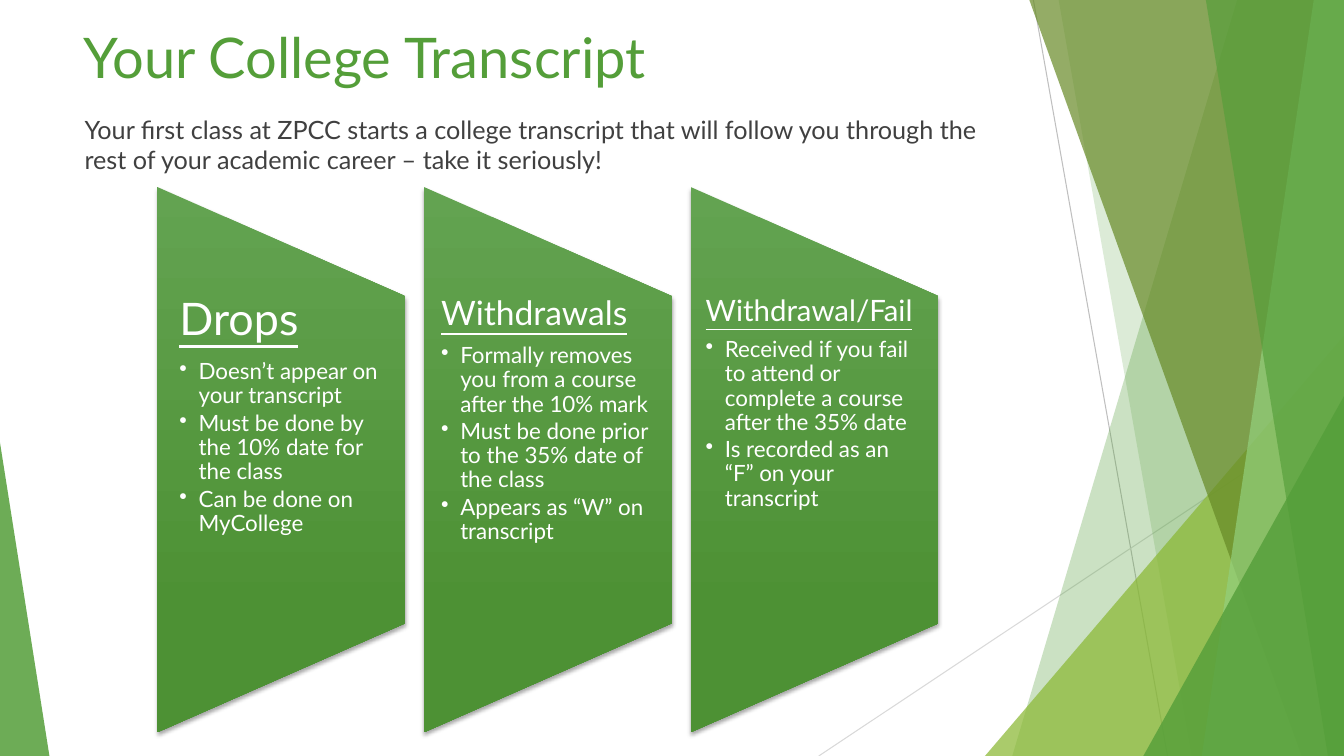
from dataclasses import dataclass

from lxml.etree import SubElement as Sub
from pptx import Presentation
from pptx.dml.color import RGBColor as Rgb
from pptx.enum.shapes import MSO_CONNECTOR as Link, MSO_SHAPE as Form
from pptx.oxml.ns import qn
from pptx.util import Inches, Pt


@dataclass(frozen=True)
class Theme:
    face: str = "Lato"
    green: str = "549E39"
    lime: str = "8AB833"
    olive: str = "678A26"
    mint: str = "93D07D"
    light: str = "63A351"
    dark: str = "4D9134"
    ink: str = "404040"
    white: str = "FFFFFF"
    title: int = 40
    lead: int = 18
    item: int = 16


@dataclass(frozen=True)
class Ray:
    start: tuple[float, float]
    end: tuple[float, float]
    hue: str


@dataclass(frozen=True)
class Facet:
    """Band from a slanted left edge to the right side of the slide."""
    head: float
    foot: float
    hue: str
    alpha: int


@dataclass(frozen=True)
class Wedge:
    """Right triangle standing on the foot of the slide."""
    left: float
    top: float
    width: float
    apex: int
    hue: str
    alpha: int


@dataclass(frozen=True)
class Panel:
    head: str
    size: int
    inset: float
    items: tuple[str, ...]


THEME = Theme()

# Grid of 100 columns by 100 rows
WIDE, HIGH = Inches(13.33), Inches(7.5)


def col(n: float) -> int:
    return round(WIDE * n / 100)


def row(n: float) -> int:
    return round(HIGH * n / 100)


RAYS = (
    Ray((76.89, 0), (86.87, 100), "BFBFBF"),
    Ray((100, 53.73), (60.92, 100), "D9D9D9"),
)
DECOR = (
    Facet(92.05, 75.32, THEME.green, 30),
    Facet(78.77, 88.67, THEME.green, 20),
    Wedge(73.29, 44.4, 26.71, 1, THEME.lime, 72),
    Facet(76.59, 96.85, THEME.olive, 70),
    Facet(97.75, 89.42, THEME.mint, 70),
    Facet(89.72, 98.8, THEME.green, 65),
    Wedge(85.07, 52.4, 14.93, 1, THEME.green, 80),
    Wedge(0, 58.53, 3.68, 0, THEME.green, 85),
)
PANELS = (
    Panel("Drops", 32, 1.65, (
        "Doesn’t appear on your transcript",
        "Must be done by the 10% date for the class",
        "Can be done on MyCollege")),
    Panel("Withdrawals", 24, 1.28, (
        "Formally removes you from a course after the 10% mark",
        "Must be done prior to the 35% date of the class",
        "Appears as “W” on transcript")),
    Panel("Withdrawal/Fail", 21, 1.13, (
        "Received if you fail to attend or complete a course after the 35% date",
        "Is recorded as an “F” on your transcript")),
)
LEFT, STEP, SPAN = 11.7, 19.84, 18.45  # panel columns


def draw_ray(shapes, ray: Ray) -> None:
    (x1, y1), (x2, y2) = ray.start, ray.end
    line = shapes.add_connector(Link.STRAIGHT, col(x1), row(y1), col(x2), row(y2))
    line.line.width = Pt(0.75)
    line.line.color.rgb = Rgb.from_string(ray.hue)
    Sub(line._element.spPr, qn("a:effectLst"))


def draw_decor(shapes, part: Facet | Wedge) -> None:
    if isinstance(part, Facet):
        pen = shapes.build_freeform(col(part.head), 0)
        pen.add_line_segments([(WIDE, 0), (WIDE, HIGH), (col(part.foot), HIGH)])
        shape = pen.convert_to_shape()
    else:
        shape = shapes.add_shape(Form.ISOSCELES_TRIANGLE, col(part.left), row(part.top),
                                 col(part.width), row(100 - part.top))
        shape.adjustments[0] = part.apex
    shape.shadow.inherit = False
    shape.line.fill.background()
    shape.fill.solid()
    shape.fill.fore_color.rgb = Rgb.from_string(part.hue)
    tint = shape._element.spPr.find(qn("a:solidFill"))[0]
    Sub(tint, qn("a:alpha"), val=str(part.alpha * 1000))


def add_frame(shapes, left: float, top: float, width: float, height: float):
    frame = shapes.add_textbox(col(left), row(top), col(width), row(height)).text_frame
    frame.word_wrap = True
    return frame


def write(para, text: str, size: int, hue: str, under: bool = False) -> None:
    run = para.add_run()
    run.text = text
    look = {"name": THEME.face, "size": Pt(size), "underline": under}
    for key, value in look.items():
        setattr(run.font, key, value)
    run.font.color.rgb = Rgb.from_string(hue)


def pace(para, after: int):
    """Set tight lines, and the gap below as a percentage of the type size."""
    para.line_spacing = 0.9
    props = para._p.get_or_add_pPr()
    Sub(Sub(props, qn("a:spcAft")), qn("a:spcPct"), val=str(after * 1000))
    return props


def draw_panel(shapes, left: float, panel: Panel) -> None:
    # Slanted plate, turned on its side about its centre
    long, short = row(72.13), col(SPAN)
    mid = col(left) + short // 2, row(60.8)
    plate = shapes.add_shape(Form.FLOWCHART_MANUAL_OPERATION,
                             mid[0] - long // 2, mid[1] - short // 2, long, short)
    plate.rotation = 270
    plate.line.fill.background()
    plate.fill.gradient()
    plate.fill.gradient_angle = 270
    for stop, place, hue in zip(plate.fill.gradient_stops, (0, 0.78),
                                (THEME.light, THEME.dark)):
        stop.position = place
        stop.color.rgb = Rgb.from_string(hue)
    props = plate._element.spPr
    props.find(qn("a:gradFill")).set("rotWithShape", "0")

    # Soft shadow below the plate
    plate.shadow.inherit = False
    shade = Sub(props.find(qn("a:effectLst")), qn("a:outerShdw"), blurRad=str(Pt(3)),
                dist=str(Pt(2)), dir="5400000", rotWithShape="0")
    Sub(Sub(shade, qn("a:srgbClr"), val="000000"), qn("a:alpha"), val="35000")

    # Heading and bullets
    frame = add_frame(shapes, left, 39.2, SPAN, 43.33)
    edge = col(panel.inset)
    for key, value in {"left": edge, "right": edge, "top": 0, "bottom": 0}.items():
        setattr(frame, f"margin_{key}", value)
    para = frame.paragraphs[0]
    pace(para, 35)
    write(para, panel.head, panel.size, THEME.white, True)
    for item in panel.items:
        para = frame.add_paragraph()
        para.level = 1
        props = pace(para, 15)
        props.set("marL", str(Inches(0.19)))
        props.set("indent", str(-Inches(0.19)))
        Sub(props, qn("a:buChar"), char="•")
        write(para, item, THEME.item, THEME.white)


def main() -> None:
    deck = Presentation()
    deck.slide_width, deck.slide_height = WIDE, HIGH
    shapes = deck.slides.add_slide(deck.slide_layouts[6]).shapes

    # Backdrop
    for ray in RAYS:
        draw_ray(shapes, ray)
    for part in DECOR:
        draw_decor(shapes, part)

    # Title and lead
    title = add_frame(shapes, 5.48, 2.27, 70.52, 19.2)
    write(title.paragraphs[0], "Your College Transcript", THEME.title, THEME.green)
    lead = add_frame(shapes, 5.55, 14.4, 70.52, 10)
    write(lead.paragraphs[0],
          "Your first class at ZPCC starts a college transcript that will follow you "
          "through the rest of your academic career – take it seriously!",
          THEME.lead, THEME.ink)

    # Panels
    for n, panel in enumerate(PANELS):
        draw_panel(shapes, LEFT + n * STEP, panel)

    deck.save("out.pptx")


if __name__ == "__main__":
    main()
